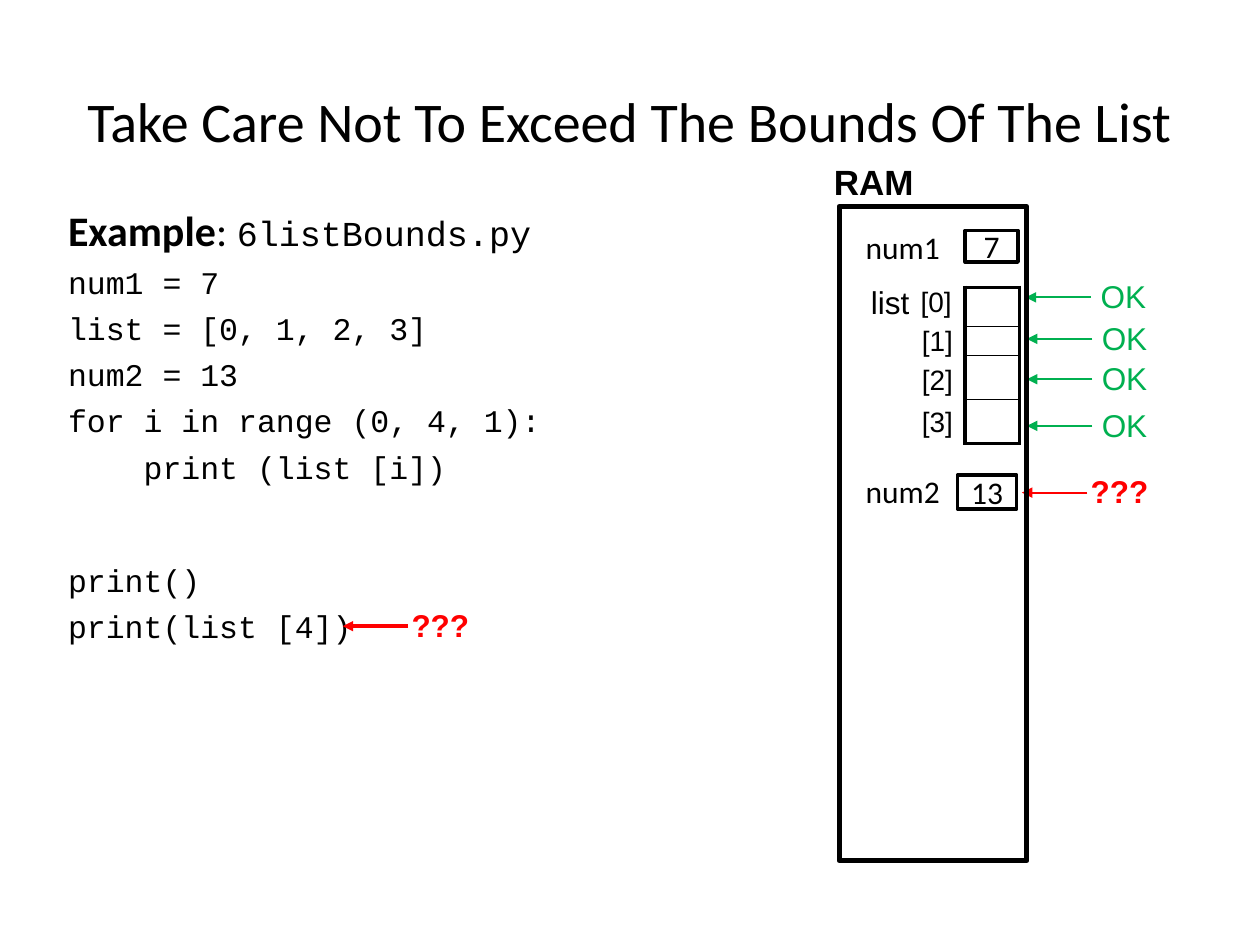
from dataclasses import dataclass
from lxml.etree import SubElement as Sub
from pptx import Presentation
from pptx.dml.color import RGBColor as RGB
from pptx.enum.shapes import MSO_CONNECTOR as Line, MSO_SHAPE as Kind
from pptx.enum.text import MSO_ANCHOR as Anchor, PP_ALIGN as Align
from pptx.oxml.ns import qn
from pptx.util import Inches, Pt


@dataclass(frozen=True)
class Theme:
    ink: str = "000000"
    good: str = "00B050"
    bad: str = "FF0000"
    sans: str = "Arial"
    head: str = "Calibri"
    mono: str = "Courier New"
    title: int = 32
    lead: int = 24
    large: int = 20
    text: int = 18
    small: int = 16
    gap: float = 4.8


T = Theme()


def write(par, text, size=T.text, font=T.sans, color=T.ink, bold=False, align=Align.CENTER):
    par.alignment = align
    run = par.add_run()
    run.text = text
    run.font.size = Pt(size)
    run.font.name = font
    run.font.bold = bold
    run.font.color.rgb = RGB.from_string(color)


def setup(frame, anchor=Anchor.TOP):
    frame.word_wrap = True
    frame.vertical_anchor = anchor
    frame.margin_left = frame.margin_right = 0
    frame.margin_top = frame.margin_bottom = 0
    return frame


def place(slide, x, y, w, h):
    box = slide.shapes.add_textbox(Inches(x), Inches(y), Inches(w), Inches(h))
    return setup(box.text_frame)


def label(slide, x, y, w, h, text, **form):
    write(place(slide, x, y, w, h).paragraphs[0], text, **form)


def rect(slide, x, y, w, h, width):
    shape = slide.shapes.add_shape(Kind.RECTANGLE, Inches(x), Inches(y), Inches(w), Inches(h))
    shape.shadow.inherit = False
    shape.fill.background()
    shape.line.color.rgb = RGB.from_string(T.ink)
    shape.line.width = Pt(width)
    return shape


def pointer(slide, x, y, text, color, width=1, bold=False):
    line = slide.shapes.add_connector(
        Line.STRAIGHT, Inches(x + 0.52), Inches(y), Inches(x), Inches(y))
    line.line.color.rgb = RGB.from_string(color)
    line.line.width = Pt(width)
    Sub(line.line._get_or_add_ln(), qn("a:tailEnd"), type="triangle")
    Sub(line._element.spPr, qn("a:effectLst"))
    label(slide, x + 0.53, y - 0.16, 0.49, 0.3, text, color=color, bold=bold)


def heading(slide, x, y, w, h):
    title = slide.shapes.title
    title.left, title.top, title.width, title.height = map(Inches, (x, y, w, h))
    title.text_frame.vertical_anchor = Anchor.MIDDLE
    write(title.text_frame.paragraphs[0], "Take Care Not To Exceed The Bounds Of The List",
          size=T.title, font=T.head)


def code(frame, lines, first):
    for i, (text, inset) in enumerate(lines):
        par = frame.paragraphs[0] if first and i == 0 else frame.add_paragraph()
        if not (first and i == 0):
            par.space_before = Pt(T.gap)
        if inset:
            par._p.get_or_add_pPr().set("marL", str(Inches(inset)))
        write(par, text, font=T.mono, align=Align.LEFT)


def program(slide, x, y, w):
    frame = place(slide, x, y, w, 2.22)
    par = frame.paragraphs[0]
    write(par, "Example", size=T.lead, font=T.head, bold=True, align=Align.LEFT)
    write(par, ": ", size=T.lead, font=T.head, align=Align.LEFT)
    write(par, "6listBounds.py", size=T.large, font=T.mono, align=Align.LEFT)
    code(frame, [("num1 = 7", 0), ("list = [0, 1, 2, 3]", 0), ("num2 = 13", 0),
                 ("for i in range (0, 4, 1):", 0), ("print (list [i])", 0.6)], False)
    code(place(slide, x, y + 2.83, w, 1.07), [("print()", 0), ("print(list [4])", 0)], True)
    pointer(slide, x + 2.18, y + 3.35, "???", T.bad, width=2, bold=True)


def edge(cell, widths):
    props = cell._tc.get_or_add_tcPr()
    for tag, width in zip(("lnL", "lnR", "lnT", "lnB"), widths):
        line = Sub(props, qn("a:" + tag), w=str(Pt(width)))
        fill = Sub(line, qn("a:solidFill"))
        Sub(fill, qn("a:srgbClr"), val=T.ink)
    cell.fill.background()


def cells(slide, x, y, w, rows):
    shape = slide.shapes.add_table(len(rows), 1, Inches(x), Inches(y),
                                   Inches(w), Inches(sum(rows)))
    table = shape.table
    table.first_row = table.horz_banding = False
    table.columns[0].width = Inches(w)
    last = len(rows) - 1
    for i, high in enumerate(rows):
        table.rows[i].height = Inches(high)
        cell = table.cell(i, 0)
        cell.margin_left = cell.margin_right = cell.margin_top = cell.margin_bottom = 0
        Sub(cell.text_frame.paragraphs[0]._p, qn("a:endParaRPr"), sz="1000")
        edge(cell, (2.25, 2.25, 2.25 if i == 0 else 1, 2.25 if i == last else 1))


def value(slide, x, y, name, text, left, w, h):
    label(slide, x, y, 0.63, 0.3, name, font=T.head, align=Align.LEFT)
    shape = rect(slide, left, y + 0.02, w, h, 2)
    write(setup(shape.text_frame, Anchor.MIDDLE).paragraphs[0], text, font=T.head)


def memory(slide, x, y, w, h):
    cells(slide, x + 1, y + 0.64, 0.43, (0.31, 0.23, 0.35, 0.35))
    label(slide, x + 0.23, y + 0.61, 0.35, 0.3, "list")
    for i, (mark, tip) in enumerate(((0.62, 0.72), (0.93, 1.05), (1.24, 1.37), (1.57, 1.74))):
        shift = 0.01 if i else 0
        label(slide, x + 0.58 + shift, y + mark, 0.38, 0.27, f"[{i}]", size=T.small)
        pointer(slide, x + w - 0.01 + shift, y + tip, "OK", T.good)
    pointer(slide, x + w - 0.04, y + 2.27, "???", T.bad, bold=True)
    rect(slide, x, y, w, h, 3)
    label(slide, x - 0.48, y - 0.37, 1.51, 0.33, "RAM", size=T.large, bold=True)
    value(slide, x + 0.21, y + 0.17, "num1", "7", x + 1, 0.42, 0.25)
    value(slide, x + 0.21, y + 2.11, "num2", "13", x + 0.94, 0.47, 0.27)


def main():
    deck = Presentation()
    deck.slide_width, deck.slide_height = Inches(10), Inches(7.5)
    slide = deck.slides.add_slide(deck.slide_layouts[5])
    heading(slide, 0.5, 0.3, 9, 1.3)
    program(slide, 0.54, 1.62, 4.26)
    memory(slide, 6.66, 1.64, 1.49, 5.19)
    deck.save("out.pptx")


if __name__ == "__main__":
    main()
